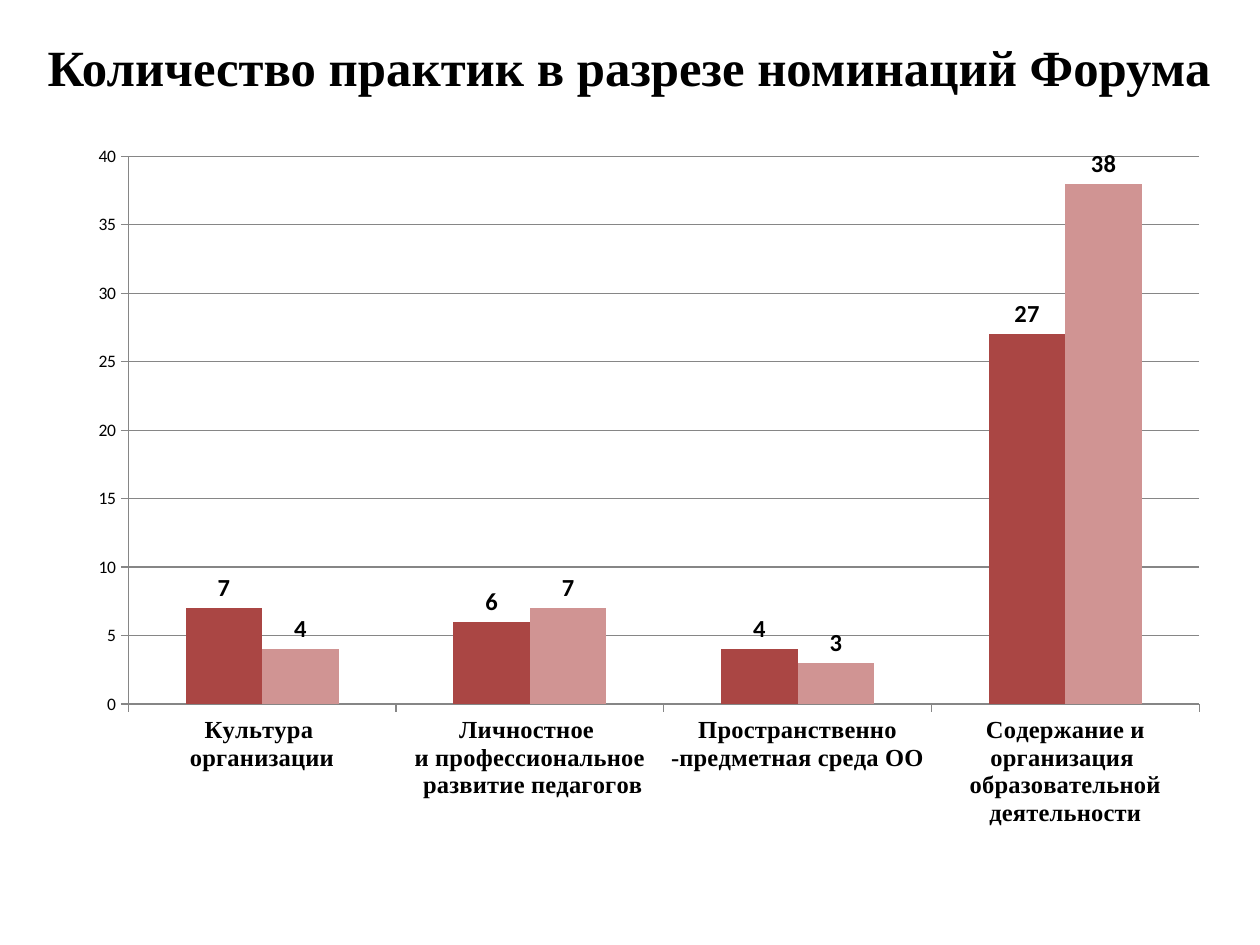
from pptx import Presentation
from pptx import util as u
from pptx.chart import data as chart_data
from pptx.dml.color import RGBColor
from pptx.enum import chart as charts, text

WIDTH, HEIGHT = u.Inches(10), u.Inches(7.5)
BLACK, GREY = "000000", "868686"
CATEGORIES = [
    "Культура \nорганизации",
    "Личностное \nи профессиональное\n развитие педагогов",
    "Пространственно\n-предметная среда ОО",
    "Содержание и организация \nобразовательной деятельности",
]
SERIES = [
    ("Series 1", (7, 6, 4, 27), "AA4644"),
    ("Series 2", (4, 7, 3, 38), "D09493"),
]


def rgb(value):
    return RGBColor.from_string(value)


def share(left, top, width, height):
    """Turn shares of the slide's size into lengths."""
    return (int(WIDTH * left), int(HEIGHT * top),
            int(WIDTH * width), int(HEIGHT * height))


def set_font(font, name="Calibri", size=10, bold=False, color=BLACK):
    font.name, font.size, font.bold = name, u.Pt(size), bold
    font.color.rgb = rgb(color)


def add_text(page, words, area, align=text.PP_ALIGN.CENTER, **font):
    box = page.shapes.add_textbox(*share(*area))
    frame = box.text_frame
    frame.word_wrap = True
    frame.vertical_anchor = text.MSO_ANCHOR.MIDDLE
    para = frame.paragraphs[0]
    para.alignment = align
    span = para.add_run()
    span.text = words
    set_font(span.font, **font)


def set_line(line, color=GREY, width=0.75):
    line.color.rgb = rgb(color)
    line.width = u.Pt(width)


def style_axes(chart):
    values, names = chart.value_axis, chart.category_axis
    values.minimum_scale, values.maximum_scale, values.major_unit = 0, 40, 5
    values.has_major_gridlines = True
    set_line(values.major_gridlines.format.line)
    for axis in (values, names):
        axis.major_tick_mark = charts.XL_TICK_MARK.OUTSIDE
        axis.minor_tick_mark = charts.XL_TICK_MARK.NONE
        set_line(axis.format.line)
    set_font(values.tick_labels.font)
    set_font(names.tick_labels.font, name="Times New Roman", size=14, bold=True)


def style_series(series, color):
    series.format.fill.solid()
    series.format.fill.fore_color.rgb = rgb(color)
    labels = series.data_labels
    labels.show_value = True
    labels.position = charts.XL_LABEL_POSITION.OUTSIDE_END
    set_font(labels.font, size=14, bold=True)


def add_columns(page, area):
    data = chart_data.CategoryChartData()
    data.categories = CATEGORIES
    for name, values, _ in SERIES:
        data.add_series(name, values)
    chart = page.shapes.add_chart(
        charts.XL_CHART_TYPE.COLUMN_CLUSTERED, *share(*area), data).chart
    chart.has_title = chart.has_legend = False
    set_font(chart.font)
    plot = chart.plots[0]
    plot.gap_width, plot.overlap = 150, 0
    plot.vary_by_categories = False
    style_axes(chart)
    for series, (_, _, color) in zip(plot.series, SERIES):
        style_series(series, color)


def main():
    deck = Presentation()
    deck.slide_width, deck.slide_height = WIDTH, HEIGHT
    page = deck.slides.add_slide(deck.slide_layouts[6])
    add_text(page, "Количество практик в разрезе номинаций Форума",
             (0, 0.01, 1, 0.12), name="Times New Roman", size=29, bold=True)
    add_columns(page, (0.06, 0.14, 0.91, 0.75))
    deck.save("out.pptx")


if __name__ == "__main__":
    main()
